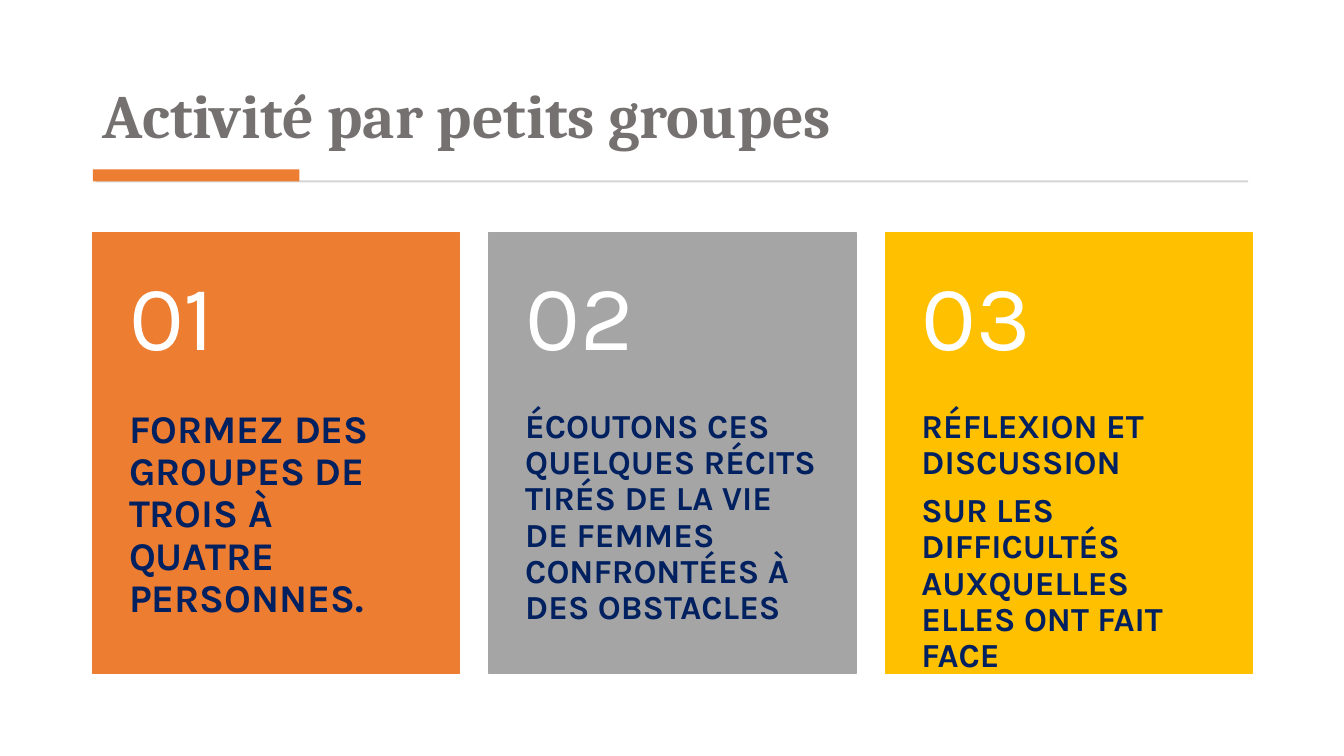
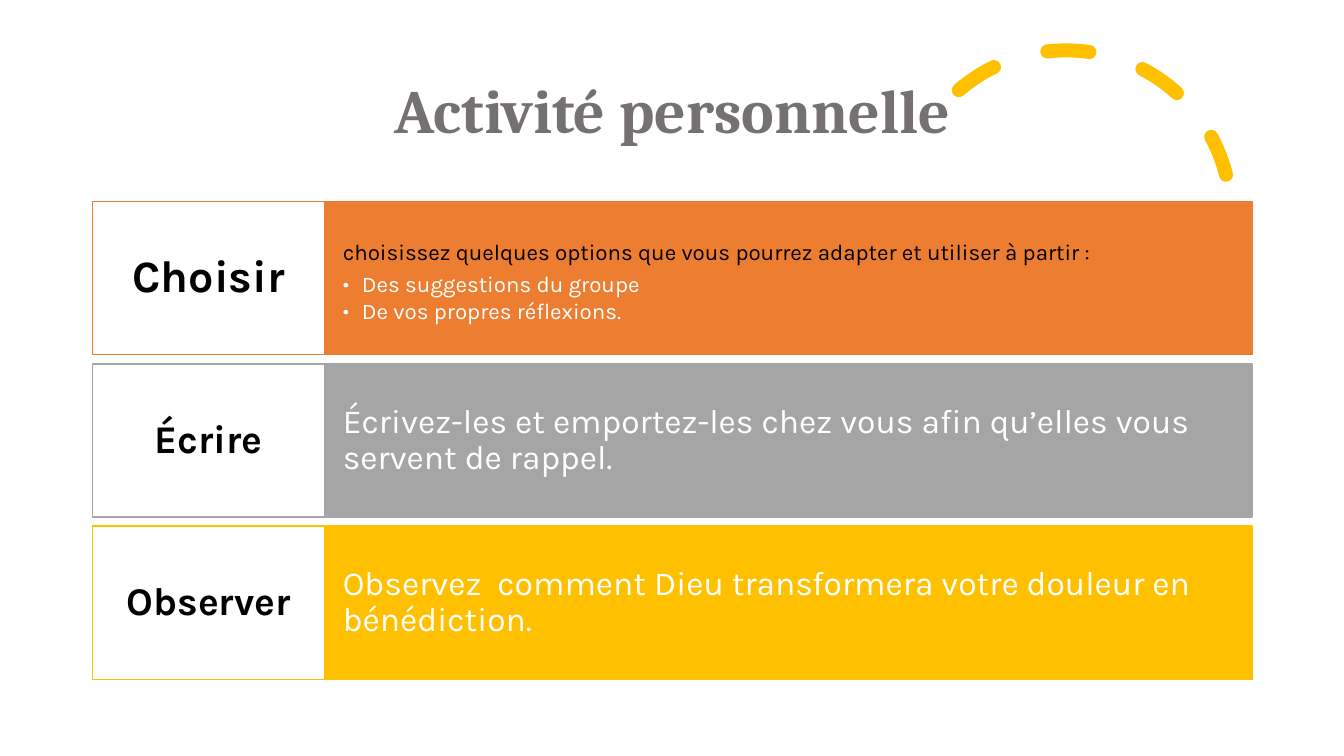
from lxml.etree import SubElement
from pptx import Presentation
from pptx.dml.color import RGBColor
from pptx.enum.dml import MSO_LINE
from pptx.enum.shapes import MSO_SHAPE
from pptx.enum.text import MSO_ANCHOR, MSO_AUTO_SIZE, PP_ALIGN
from pptx.oxml.ns import qn
from pptx.util import Inches, Pt

ORANGE = RGBColor(0xED, 0x7D, 0x31)
GRAY = RGBColor(0xA5, 0xA5, 0xA5)
GOLD = RGBColor(0xFF, 0xC0, 0x00)
SILVER = RGBColor(0xD5, 0xD5, 0xD5)
SLATE = RGBColor(0x76, 0x71, 0x71)
NAVY = RGBColor(0x00, 0x20, 0x60)
BLACK = RGBColor(0x00, 0x00, 0x00)
WHITE = RGBColor(0xFF, 0xFF, 0xFF)
COLORS = (ORANGE, GRAY, GOLD)

LEFT = 0.92
MIDDLE = MSO_ANCHOR.MIDDLE


def write(frame, text, size=24, color=WHITE, bold=False, font="Karla",
          align=PP_ALIGN.LEFT, after=0.35, bullet=False):
    """Add one paragraph; the space after it is a share of the text size."""
    para = frame.paragraphs[0] if not frame.text else frame.add_paragraph()
    if bullet:
        props = para._p.get_or_add_pPr()
        props.set("marL", str(Inches(0.19)))
        props.set("indent", str(-Inches(0.19)))
        SubElement(props, qn("a:buFont")).set("typeface", font)
        SubElement(props, qn("a:buChar")).set("char", "•")
    para.alignment = align
    para.line_spacing = 0.9
    para.space_before = Pt(0)
    para.space_after = Pt(size * after)
    run = para.add_run()
    run.text = text
    run.font.name = font
    run.font.size = Pt(size)
    run.font.bold = bold
    run.font.color.rgb = color


class Deck:
    """Holds the presentation, its style and the current slide."""

    def __init__(self):
        self.show = Presentation()
        self.show.slide_width = Inches(13.33)
        self.show.slide_height = Inches(7.5)
        self.slide = None

    def add(self):
        self.slide = self.show.slides.add_slide(self.show.slide_layouts[5])

    def frame(self, shape, pads, anchor):
        """Set the insets (left and right, top, bottom) and the anchor."""
        frame = shape.text_frame
        frame.word_wrap = True
        frame.auto_size = MSO_AUTO_SIZE.NONE
        frame.vertical_anchor = anchor
        side, top, base = pads
        frame.margin_left = frame.margin_right = Inches(side)
        frame.margin_top, frame.margin_bottom = Inches(top), Inches(base)
        return frame

    def title(self, text, box, anchor, align):
        shape = self.slide.shapes.title
        shape.left, shape.top, shape.width, shape.height = map(Inches, box)
        frame = self.frame(shape, (0.1, 0.05, 0.05), anchor)
        write(frame, text, size=44, color=SLATE, bold=True, font="Cambria",
              align=align, after=0)

    def rect(self, box, fill, line=None):
        shape = self.slide.shapes.add_shape(MSO_SHAPE.RECTANGLE,
                                            *map(Inches, box))
        shape.shadow.inherit = False
        shape.fill.solid()
        shape.fill.fore_color.rgb = fill
        if line is None:
            shape.line.fill.background()
        else:
            shape.line.color.rgb = line
            shape.line.width = Pt(1)
        return shape

    def text(self, box, pads, anchor=MSO_ANCHOR.TOP):
        shape = self.slide.shapes.add_textbox(*map(Inches, box))
        return self.frame(shape, pads, anchor)

    def card(self, left, color, label, lines, size):
        top, wide, head = 2.31, 3.64, 1.75
        self.rect((left, top, wide, 4.37), color, color)
        body = self.text((left, top + head, wide, 2.62), (0.36, 0, 0.36))
        for line in lines:
            write(body, line, size=size, color=NAVY, bold=True)
        number = self.text((left, top, wide, head), (0.36, 0.18, 0.18), MIDDLE)
        write(number, label, size=66)

    def row(self, top, color, label, size, anchor=MIDDLE):
        """Draw a labelled band and return the frame for its text."""
        wide, high = 2.3, 1.52
        band = self.rect((LEFT + wide, top, 9.2, high), color, color)
        tag = self.rect((LEFT, top, wide, high), WHITE, color)
        write(self.frame(tag, (0.12, 0.15, 0.15), MIDDLE), label, size=size,
              color=BLACK, bold=True, align=PP_ALIGN.CENTER)
        return self.frame(band, (0.18, 0.39, 0.39), anchor)

    def arc(self, box, start, turn, color):
        """Draw a dashed arc from the start angle, clockwise to zero."""
        shape = self.slide.shapes.add_shape(MSO_SHAPE.ARC, *map(Inches, box))
        shape.shadow.inherit = False
        # Angles are kept in 60000ths of a degree, adjustments in 100000ths
        shape.adjustments[0] = start * 0.6
        shape.adjustments[1] = 0
        shape.rotation = turn
        shape.fill.background()
        shape.line.color.rgb = color
        shape.line.width = Pt(10)
        shape.line.dash_style = MSO_LINE.DASH
        shape.line._get_or_add_ln().set("cap", "rnd")


def group(deck):
    deck.add()
    deck.title("Activité par petits groupes", (LEFT, 0.45, 11.49, 1.11),
               MSO_ANCHOR.BOTTOM, PP_ALIGN.LEFT)
    # Rule with its accent
    deck.rect((0.95, 1.79, 11.43, 0.02), SILVER)
    deck.rect((LEFT, 1.68, 2.05, 0.12), ORANGE)
    # Numbered cards
    cards = (
        (28, ["FORMEZ DES GROUPES DE TROIS À QUATRE PERSONNES."]),
        (24, ["ÉCOUTONS CES QUELQUES RÉCITS TIRÉS DE LA VIE DE FEMMES "
              "CONFRONTÉES À DES OBSTACLES"]),
        (24, ["RÉFLEXION ET DISCUSSION",
              "SUR LES DIFFICULTÉS AUXQUELLES ELLES ONT FAIT FACE"]),
    )
    for i, (size, lines) in enumerate(cards):
        deck.card(LEFT + 3.93 * i, COLORS[i], f"{i + 1:02}", lines, size)


def personal(deck):
    deck.add()
    # Dashed arc to the right of the title
    deck.arc((8.94, 0.5, 3.27, 3.27), 243.55, 345.8, GOLD)
    deck.title("Activité personnelle", (LEFT, 0.4, 11.5, 1.45),
               MIDDLE, PP_ALIGN.CENTER)
    # First row, with a list
    top, step = 2, 1.61
    band = deck.row(top, ORANGE, "Choisir", 32, MSO_ANCHOR.TOP)
    write(band, "choisissez quelques options que vous pourrez adapter et "
          "utiliser à partir :", size=16, color=BLACK)
    for item in ("Des suggestions du groupe", "De vos propres réflexions."):
        write(band, item, size=16, after=0.15, bullet=True)
    # Rows with one sentence
    rows = (
        ("Écrire", "Écrivez-les et emportez-les chez vous afin qu’elles vous "
         "servent de rappel."),
        ("Observer", "Observez  comment Dieu transformera votre douleur en "
         "bénédiction."),
    )
    for i, (label, text) in enumerate(rows, 1):
        write(deck.row(top + step * i, COLORS[i], label, 28), text)


def main():
    deck = Deck()
    group(deck)
    personal(deck)
    deck.show.save("out.pptx")


if __name__ == "__main__":
    main()
